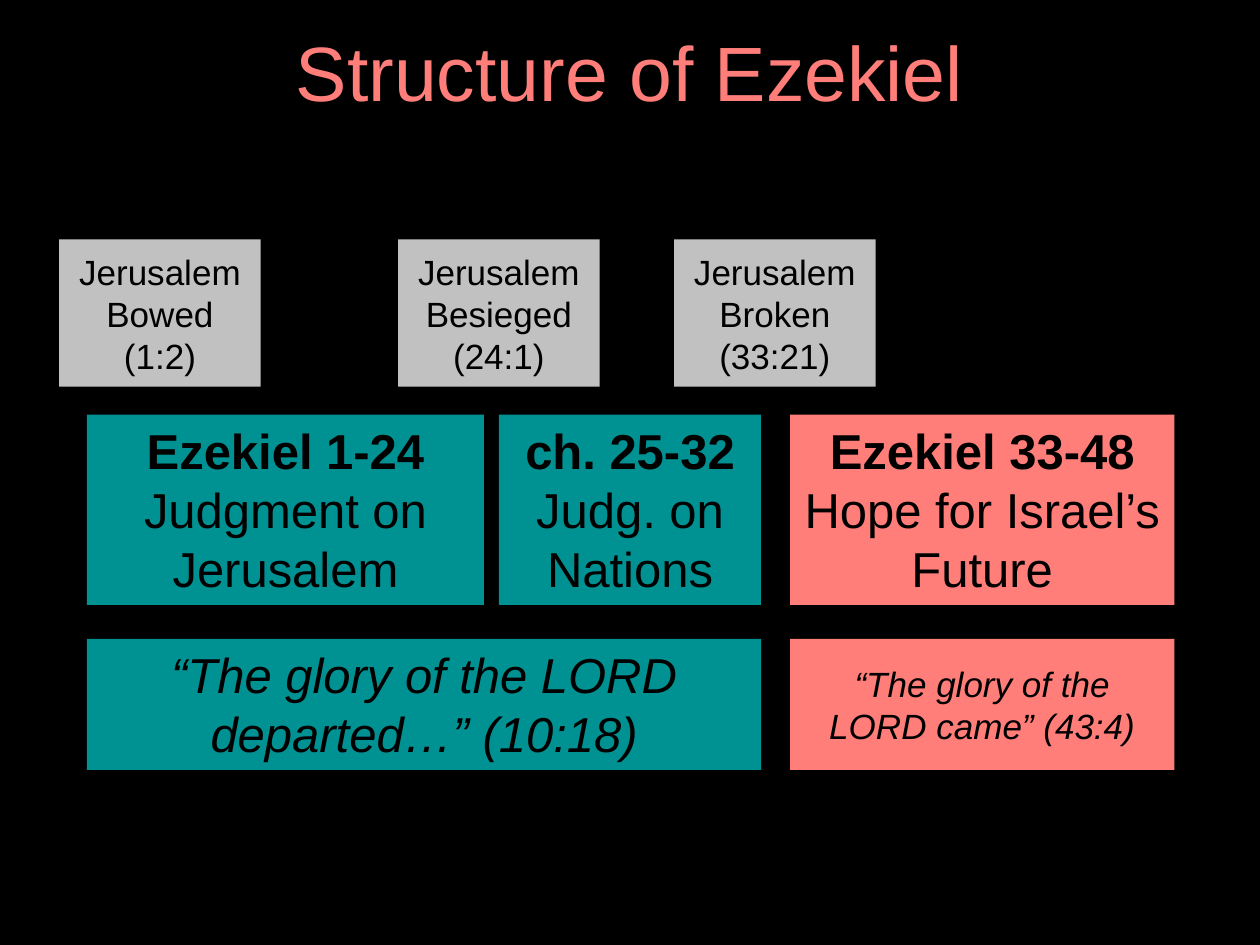
from pptx import Presentation
from pptx.dml.color import RGBColor
from pptx.enum.shapes import MSO_SHAPE
from pptx.enum.text import MSO_ANCHOR, PP_ALIGN
from pptx.util import Inches, Pt

RECTANGLE = MSO_SHAPE.RECTANGLE
TOP, MIDDLE = MSO_ANCHOR.TOP, MSO_ANCHOR.MIDDLE
CENTER = PP_ALIGN.CENTER
TITLE_ONLY = 5
FONT = "Arial"
BLACK, TEAL, CORAL, GRAY = "000000", "009193", "FF7E79", "C1C1C1"

COLUMNS = {"jerusalem": (0.69, 3.15), "nations": (3.96, 2.08), "hope": (6.27, 3.05)}
JUDGMENT = (0.69, 5.35)
EVENT_ROW, SECTION_ROW, GLORY_ROW = (1.9, 1.17), (3.29, 1.51), (5.07, 1.04)
EVENT_WIDTH = 1.6

EVENTS = [
    (0.47, "Jerusalem Bowed", "(1:2)"),
    (3.16, "Jerusalem Besieged", "(24:1)"),
    (5.35, "Jerusalem Broken", "(33:21)"),
]
SECTIONS = [
    ("jerusalem", TEAL, "Ezekiel 1-24", "Judgment on Jerusalem"),
    ("nations", TEAL, "ch. 25-32", "Judg. on Nations"),
    ("hope", CORAL, "Ezekiel 33-48", "Hope for Israel’s Future"),
]


def color(value):
    """Turn a hex string into a colour."""
    return RGBColor.from_string(value)


def write(para, text, size, ink=BLACK, bold=False, italic=False):
    """Write one centred, formatted span into a paragraph."""
    para.alignment = CENTER
    span = para.add_run()
    span.text = text
    font = span.font
    font.name, font.size = FONT, Pt(size)
    font.bold, font.italic = bold, italic
    font.color.rgb = color(ink)


def add_title(page, text):
    """Place and fill the title placeholder."""
    title = page.shapes.title
    title.left, title.top = Inches(0.69), Inches(0.16)
    title.width, title.height = Inches(8.62), Inches(0.9)
    frame = title.text_frame
    frame.word_wrap = True
    frame.vertical_anchor = MIDDLE
    para = frame.paragraphs[0]
    para.line_spacing = 0.9
    write(para, text, 44, ink=CORAL)


def add_block(page, column, row, fill, lines, size, anchor=TOP, bold_head=False, italic=False):
    """Add a filled rectangle at a column and row, with one paragraph per line."""
    (left, width), (top, height) = column, row
    box = page.shapes.add_shape(
        RECTANGLE, Inches(left), Inches(top), Inches(width), Inches(height)
    )
    box.shadow.inherit = False
    box.fill.solid()
    box.fill.fore_color.rgb = color(fill)
    box.line.fill.background()
    frame = box.text_frame
    frame.word_wrap = True
    frame.vertical_anchor = anchor
    for index, text in enumerate(lines):
        para = frame.add_paragraph() if index else frame.paragraphs[0]
        write(para, text, size, bold=bold_head and index == 0, italic=italic)


def main():
    """Build the slide and save it."""
    deck = Presentation()
    deck.slide_width, deck.slide_height = Inches(10), Inches(7.5)
    page = deck.slides.add_slide(deck.slide_layouts[TITLE_ONLY])
    page.background.fill.solid()
    page.background.fill.fore_color.rgb = color(BLACK)

    add_title(page, "Structure of Ezekiel")
    for name, fill, *lines in SECTIONS:
        add_block(page, COLUMNS[name], SECTION_ROW, fill, lines, 28, bold_head=True)
    for left, *lines in EVENTS:
        add_block(page, (left, EVENT_WIDTH), EVENT_ROW, GRAY, lines, 20, anchor=MIDDLE)
    departed = ["“The glory of the LORD departed…” (10:18)"]
    add_block(page, JUDGMENT, GLORY_ROW, TEAL, departed, 28, italic=True)
    came = ["“The glory of the LORD came” (43:4)"]
    add_block(page, COLUMNS["hope"], GLORY_ROW, CORAL, came, 20, anchor=MIDDLE, italic=True)

    deck.save("out.pptx")


if __name__ == "__main__":
    main()
